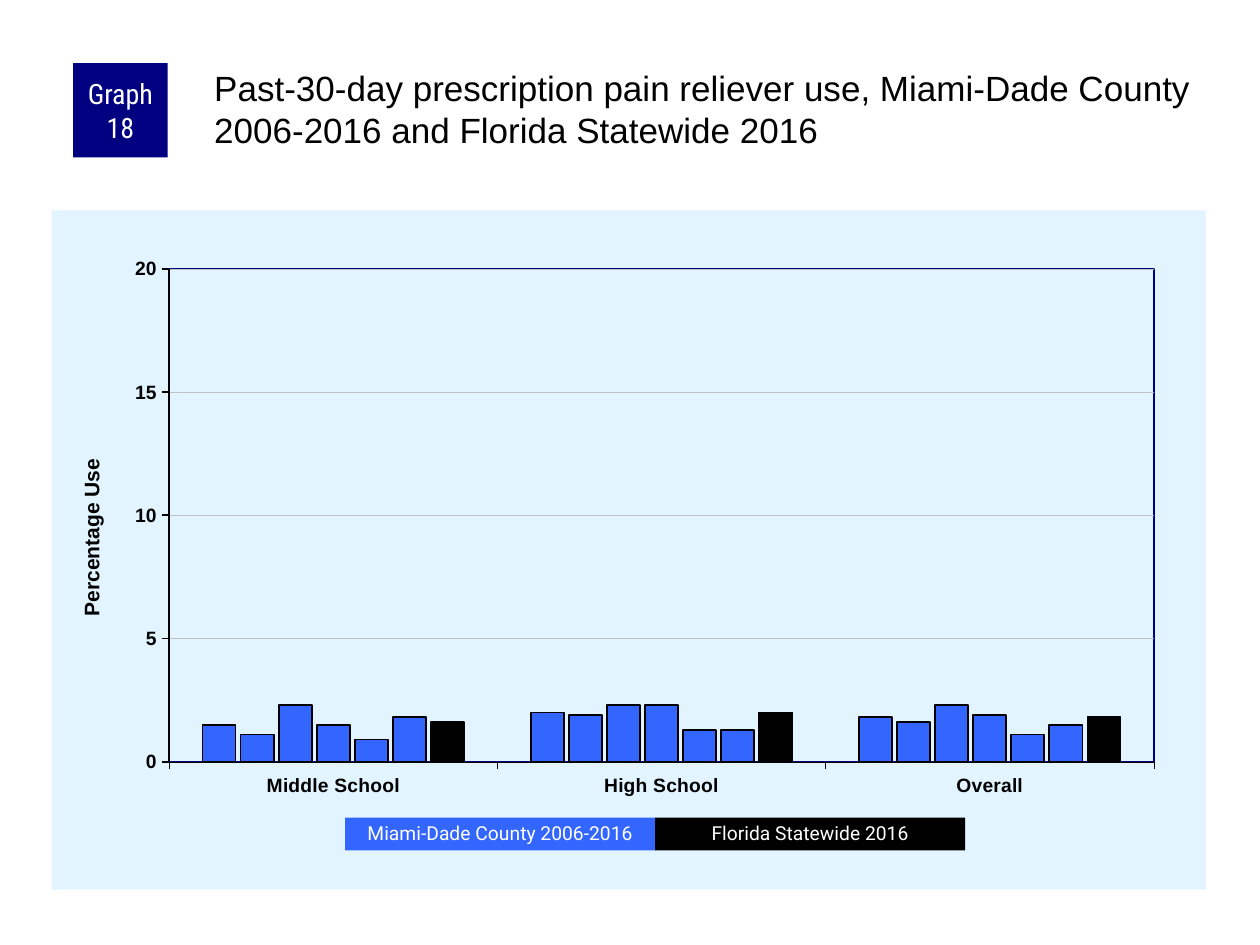
"""Build the slide on past-30-day prescription pain reliever use."""
from pptx import Presentation
from pptx import util as u
from pptx.chart.data import CategoryChartData
from pptx.dml.color import RGBColor
from pptx.enum import chart as charts, shapes, text
from pptx.oxml import parse_xml
from pptx.oxml.ns import nsdecls, qn

COLORS = {"navy": "000080", "blue": "3366FF", "black": "000000",
          "white": "FFFFFF", "pale": "E1F4FF", "grid": "C0C0C0"}
TITLE = ("Past-30-day prescription pain reliever use, Miami-Dade County "
         "2006-2016 and Florida Statewide 2016")
BADGE = "Graph 18"
AXIS_TITLE = "Percentage Use"
RATES = {"Middle School": [1.5, 1.1, 2.3, 1.5, 0.9, 1.8, 1.6],
         "High School": [2, 1.9, 2.3, 2.3, 1.3, 1.3, 2],
         "Overall": [1.8, 1.6, 2.3, 1.9, 1.1, 1.5, 1.8]}
LEGEND = [("Miami-Dade County 2006-2016", "blue"), ("Florida Statewide 2016", "black")]
LEGEND_LEFT, LEGEND_TOP, LEGEND_WIDTH, LEGEND_HEIGHT = 2.74, 6.49, 2.46, 0.26
PLOT_LAYOUT = {"x": 0.102, "y": 0.086, "w": 0.853, "h": 0.726}
AXIS_TITLE_LAYOUT = {"x": 0.02, "y": 0.36}


def rgb(name):
    return RGBColor.from_string(COLORS[name])


def inches(*lengths):
    return [u.Inches(length) for length in lengths]


def set_font(font, name, size, color, bold=False):
    font.name, font.size, font.bold = name, u.Pt(size), bold
    font.color.rgb = rgb(color)


def set_line(line, color, width):
    line.color.rgb, line.width = rgb(color), u.Pt(width)


def add_label(slide, box, words, fill, font_name, size, spacing=None):
    shape = slide.shapes.add_shape(shapes.MSO_SHAPE.RECTANGLE, *inches(*box))
    shape.shadow.inherit = False
    shape.fill.solid()
    shape.fill.fore_color.rgb = rgb(fill)
    shape.line.fill.background()
    frame = shape.text_frame
    frame.text = words
    frame.word_wrap = True
    frame.vertical_anchor = text.MSO_ANCHOR.MIDDLE
    frame.margin_left = frame.margin_right = u.Inches(0.05)
    frame.margin_top = frame.margin_bottom = 0
    paragraph = frame.paragraphs[0]
    paragraph.alignment = text.PP_ALIGN.CENTER
    paragraph.line_spacing = spacing
    set_font(paragraph.runs[0].font, font_name, size, "white")


def make_layout(fractions, target=""):
    modes = "".join(f'<c:{key}Mode val="edge"/>' for key in "xy")
    values = "".join(f'<c:{key} val="{value}"/>' for key, value in fractions.items())
    return parse_xml(f'<c:layout {nsdecls("c")}><c:manualLayout>{target}{modes}{values}'
                     '</c:manualLayout></c:layout>')


def make_frame(fill, line):
    return parse_xml(f'<c:spPr {nsdecls("c", "a")}>{fill}<a:ln w="12700">{line}</a:ln></c:spPr>')


def solid(name):
    return f'<a:solidFill><a:srgbClr val="{COLORS[name]}"/></a:solidFill>'


def remove_layout(element):
    for layout in element.findall(qn("c:layout")):
        element.remove(layout)


def add_rates_chart(slide):
    data = CategoryChartData()
    data.categories = list(RATES)
    for number, values in enumerate(zip(*RATES.values()), 1):
        data.add_series(f"Series {number}", values)
    chart = slide.shapes.add_chart(charts.XL_CHART_TYPE.COLUMN_CLUSTERED,
                                   *inches(0.41, 1.67, 9.16, 5.39), data).chart
    chart.has_legend = chart.has_title = False
    set_font(chart.font, "Arial", 8, "black")

    plot = chart.plots[0]
    plot.gap_width, plot.overlap, plot.vary_by_categories = 200, -15, False
    last = len(plot.series) - 1
    for index, series in enumerate(plot.series):
        series.format.fill.solid()
        series.format.fill.fore_color.rgb = rgb("black" if index == last else "blue")
        set_line(series.format.line, "black", 1)

    axis = chart.value_axis
    for each, width in ((chart.category_axis, 0.25), (axis, 1)):
        each.major_tick_mark = charts.XL_TICK_MARK.OUTSIDE
        each.minor_tick_mark = charts.XL_TICK_MARK.NONE
        set_font(each.tick_labels.font, "Arial", 11, "black", True)
        set_line(each.format.line, "black", width)
    axis.minimum_scale, axis.maximum_scale, axis.major_unit = 0, 20, 5
    axis.has_major_gridlines = True
    set_line(axis.major_gridlines.format.line, "grid", 0.25)
    axis.axis_title.text_frame.text = AXIS_TITLE
    title_run = axis.axis_title.text_frame.paragraphs[0].runs[0]
    set_font(title_run.font, "Arial", 12, "black", True)

    space = chart.element
    area = space.find(".//" + qn("c:plotArea"))
    remove_layout(area)
    area.insert(0, make_layout(PLOT_LAYOUT, '<c:layoutTarget val="inner"/>'))
    area.append(make_frame("<a:noFill/>", solid("navy")))
    space.find(qn("c:chart")).addnext(make_frame(solid("pale"), "<a:noFill/>"))
    title = area.find(".//" + qn("c:title"))
    remove_layout(title)
    title.find(qn("c:tx")).addnext(make_layout(AXIS_TITLE_LAYOUT))


def add_title(slide):
    title = slide.shapes.title
    title.left, title.top, title.width, title.height = inches(1.67, 0.5, 7.92, 0.83)
    frame = title.text_frame
    frame.text = TITLE
    frame.word_wrap = True
    frame.auto_size = text.MSO_AUTO_SIZE.NONE
    frame.vertical_anchor = text.MSO_ANCHOR.TOP
    frame.margin_left = frame.margin_top = u.Inches(0.03)
    frame.margin_right = frame.margin_bottom = 0
    paragraph = frame.paragraphs[0]
    paragraph.alignment = text.PP_ALIGN.LEFT
    set_font(paragraph.runs[0].font, "Arial", 20, "black")


def main():
    presentation = Presentation()
    presentation.slide_width, presentation.slide_height = inches(10, 7.5)
    slide = presentation.slides.add_slide(presentation.slide_layouts[5])
    add_title(slide)
    add_rates_chart(slide)
    add_label(slide, (0.58, 0.5, 0.75, 0.75), BADGE, "navy", "Roboto Condensed", 16)
    for column, (words, fill) in enumerate(LEGEND):
        box = (LEGEND_LEFT + column * LEGEND_WIDTH, LEGEND_TOP, LEGEND_WIDTH, LEGEND_HEIGHT)
        add_label(slide, box, words, fill, "Roboto", 11, 0.9)
    presentation.save("out.pptx")


if __name__ == "__main__":
    main()
